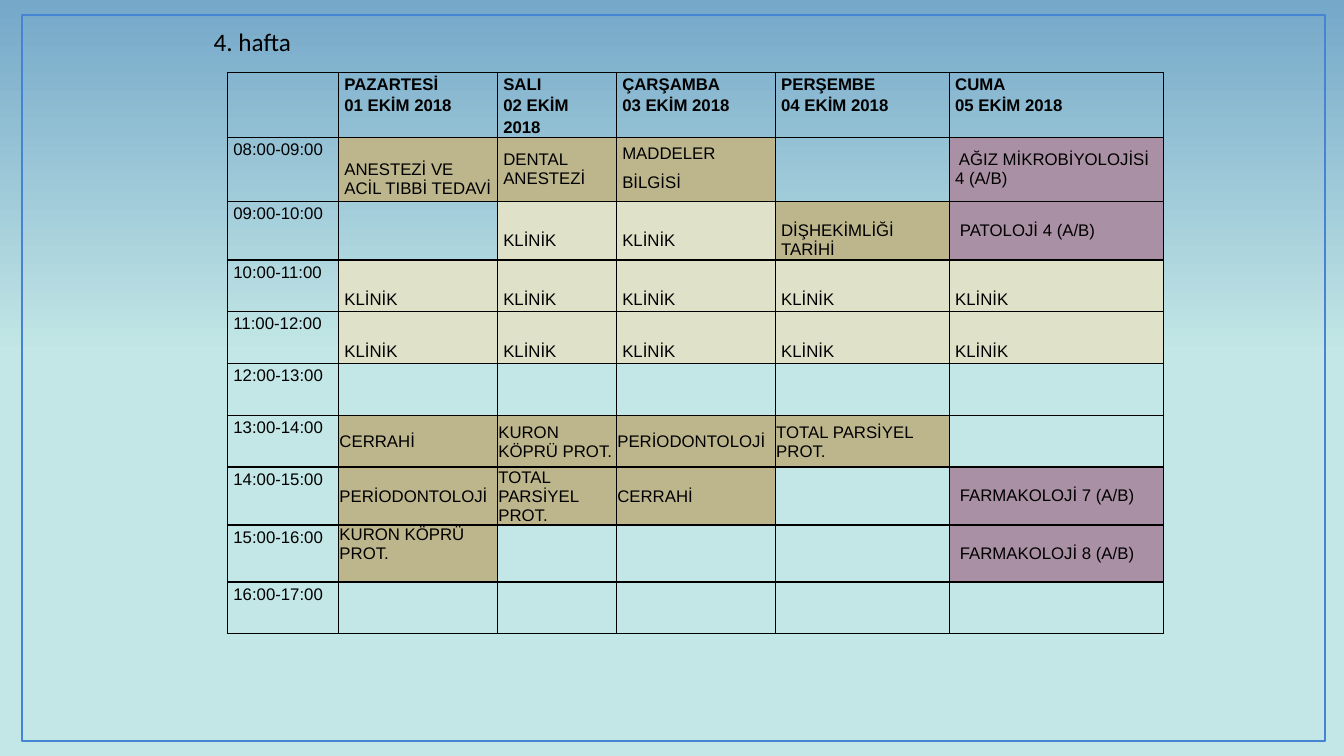
from lxml import etree
from pptx import Presentation
from pptx.dml.color import RGBColor
from pptx.enum import shapes, text
from pptx.oxml import ns
from pptx.util import Pt

COLORS = {"sky": "75A8C9", "mist": "C3E7E6", "frame": "4584D3", "ink": "000000",
          "lecture": "BDB68D", "clinic": "E0E1C9", "science": "AA90A4"}

TITLE = "4. hafta"
DAYS = ["PAZARTESİ", "SALI", "ÇARŞAMBA", "PERŞEMBE", "CUMA"]
DATES = [f"{day:02} EKİM 2018" for day in range(1, 6)]
COL_WIDTHS = [79.3, 113.5, 85, 113.5, 124.3, 152.9]
ROW_HEIGHTS = [43.5, 45.8, 42, 37, 36.7, 37.5, 36.7, 41.5, 40.7, 36.7]

# Cell styles: fill, anchor, margins (left and right, top, bottom), line spacing
TOP, MIDDLE = text.MSO_ANCHOR.TOP, text.MSO_ANCHOR.MIDDLE
STYLES = {
    "plain": (None, TOP, (4.2, 0, 0), 1.15),
    "clinic": ("clinic", TOP, (4.2, 21.5, 0), 1),
    "science": ("science", MIDDLE, (4.2, 0, 0), 1),
    "lecture": ("lecture", MIDDLE, (4.2, 0, 0), 1),
    "lecture low": ("lecture", MIDDLE, (4.2, 13.8, 0), 1),
    "lecture tight": ("lecture", MIDDLE, (0.7, 0.7, 0), 1),
    "lecture high": ("lecture", MIDDLE, (0.7, 0, 13.8), 1),
}

FREE = ("", "plain")
CLINIC = ("KLİNİK", "clinic")
SURGERY = ("CERRAHİ", "lecture tight")
PERIO = ("PERİODONTOLOJİ", "lecture tight")
DENTURE = ("TOTAL PARSİYEL PROT.", "lecture tight")
CROWN = "KURON KÖPRÜ PROT."
LESSONS = [
    [("ANESTEZİ VE ACİL TIBBİ TEDAVİ", "lecture low"), ("DENTAL ANESTEZİ", "lecture"),
     ("MADDELER BİLGİSİ", "lecture"), FREE, (" AĞIZ MİKROBİYOLOJİSİ 4 (A/B)", "science")],
    [FREE, CLINIC, CLINIC, ("DİŞHEKİMLİĞİ TARİHİ", "lecture low"),
     (" PATOLOJİ 4 (A/B)", "science")],
    [CLINIC] * 5,
    [CLINIC] * 5,
    [FREE] * 5,
    [SURGERY, (CROWN, "lecture tight"), PERIO, DENTURE, FREE],
    [PERIO, DENTURE, SURGERY, FREE, (" FARMAKOLOJİ 7 (A/B)", "science")],
    [(CROWN, "lecture high"), FREE, FREE, FREE, (" FARMAKOLOJİ 8 (A/B)", "science")],
    [FREE] * 5,
]


def rgb(name):
    return RGBColor.from_string(COLORS[name])


def style_run(r, font, size, bold=False):
    r.font.name, r.font.size, r.font.bold = font, Pt(size), bold
    r.font.color.rgb = rgb("ink")


def add_borders(cell):
    tc_pr = cell._tc.get_or_add_tcPr()
    for i, side in enumerate(("lnL", "lnR", "lnT", "lnB")):
        ln = etree.Element(ns.qn(f"a:{side}"), w=str(Pt(1)))
        solid = etree.SubElement(ln, ns.qn("a:solidFill"))
        etree.SubElement(solid, ns.qn("a:srgbClr"), val=COLORS["ink"])
        tc_pr.insert(i, ln)


def fill_cell(cell, content, style, bold=False):
    fill, anchor, (side, top, bottom), spacing = STYLES[style]
    cell.margin_left = cell.margin_right = Pt(side)
    cell.margin_top, cell.margin_bottom = Pt(top), Pt(bottom)
    cell.vertical_anchor = anchor
    if fill:
        cell.fill.solid()
        cell.fill.fore_color.rgb = rgb(fill)
    else:
        cell.fill.background()
    add_borders(cell)
    cell.text_frame.text = content
    for p in cell.text_frame.paragraphs:
        p.line_spacing = spacing
        for r in p.runs:
            style_run(r, "Arial", 12, bold)


prs = Presentation()
prs.slide_width, prs.slide_height = Pt(960), Pt(540)
s = prs.slides.add_slide(prs.slide_layouts[5])

# Background
bg = s.background.fill
bg.gradient()
bg.gradient_angle = 90
for stop, (position, name) in zip(bg.gradient_stops, [(0.53, "mist"), (1, "sky")]):
    stop.position = position
    stop.color.rgb = rgb(name)

# Frame
frame = s.shapes.add_shape(shapes.MSO_SHAPE.RECTANGLE, Pt(15.8), Pt(10.8), Pt(931), Pt(518.4))
frame.shadow.inherit = False
frame.fill.background()
frame.line.color.rgb = rgb("frame")
frame.line.width = Pt(1.5)

# Title
title = s.shapes.title
title.left, title.top, title.width, title.height = Pt(145.4), Pt(15.1), Pt(70.6), Pt(28.8)
tf = title.text_frame
tf.text = TITLE
tf.word_wrap = False
tf.auto_size = text.MSO_AUTO_SIZE.NONE
tf.vertical_anchor = TOP
tf.paragraphs[0].alignment = text.PP_ALIGN.LEFT
style_run(tf.paragraphs[0].runs[0], "Calibri", 18)

# Timetable
table = s.shapes.add_table(len(ROW_HEIGHTS), len(COL_WIDTHS), Pt(162.5), Pt(51.6),
                           Pt(sum(COL_WIDTHS)), Pt(sum(ROW_HEIGHTS))).table
table.first_row = table.horz_banding = False
for col, width in zip(table.columns, COL_WIDTHS):
    col.width = Pt(width)
for row, height in zip(table.rows, ROW_HEIGHTS):
    row.height = Pt(height)

header = [FREE] + [(f"{day}\n{date}", "plain") for day, date in zip(DAYS, DATES)]
hours = [(f"{h:02}:00-{h + 1:02}:00", "plain") for h in range(8, 17)]
grid = [header] + [[hour] + lessons for hour, lessons in zip(hours, LESSONS)]
for i, row in enumerate(grid):
    for j, (content, style) in enumerate(row):
        fill_cell(table.cell(i, j), content, style, bold=i == 0)

# The materials lesson ends with a larger space that opens up its second line
r = table.cell(1, 3).text_frame.paragraphs[0].add_run()
r.text = " "
style_run(r, "Arial", 20)

prs.save("out.pptx")
